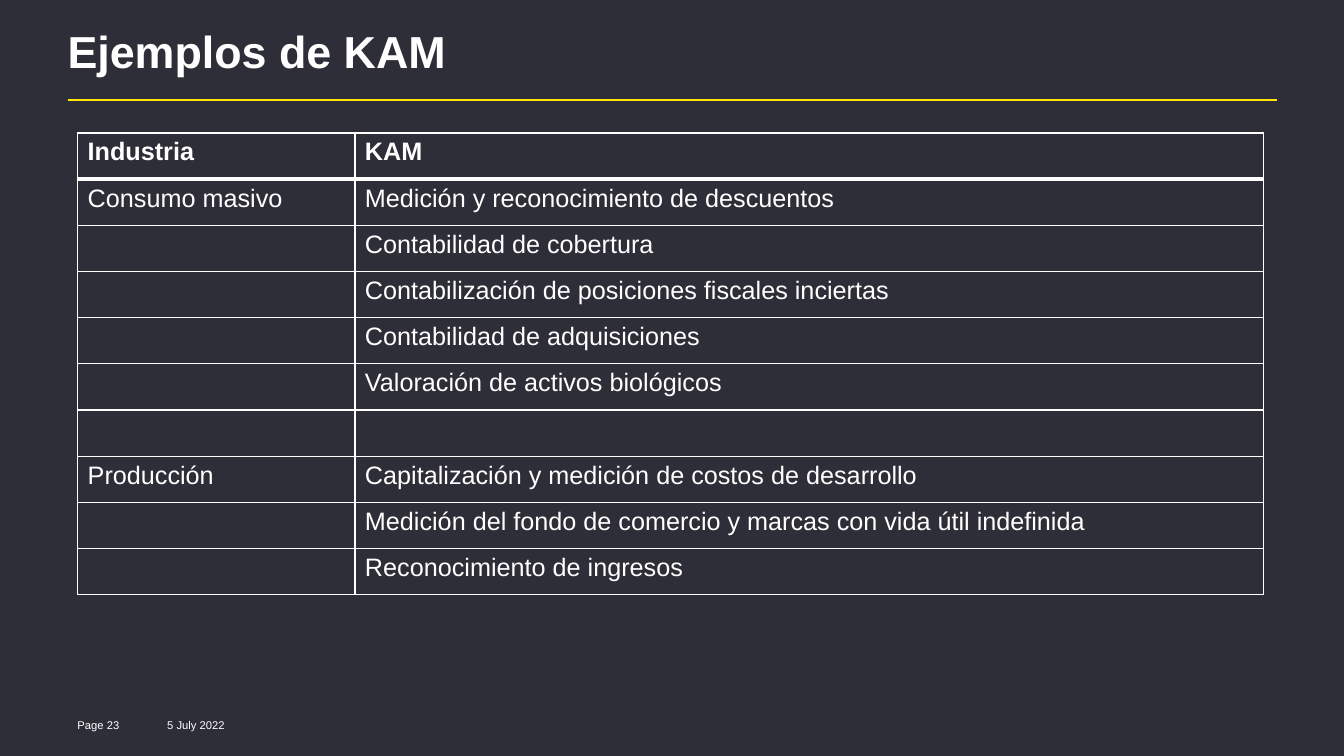
import pptx
import pptx.dml.color
import pptx.enum.shapes
import pptx.oxml
import pptx.oxml.ns
import pptx.util
from pptx.util import Inches

BACKGROUND, WHITE, YELLOW = "2E2E38", "FFFFFF", "FFE600"
KAM_ROWS = [
    ("Industria", "KAM"),
    ("Consumo masivo", "Medición y reconocimiento de descuentos"),
    ("", "Contabilidad de cobertura"),
    ("", "Contabilización de posiciones fiscales inciertas"),
    ("", "Contabilidad de adquisiciones"),
    ("", "Valoración de activos biológicos"),
    ("", ""),
    ("Producción", "Capitalización y medición de costos de desarrollo"),
    ("", "Medición del fondo de comercio y marcas con vida útil indefinida"),
    ("", "Reconocimiento de ingresos"),
]


def color(hex_code):
    return pptx.dml.color.RGBColor.from_string(hex_code)


def write(text_frame, text, size, bold=False):
    text_frame.word_wrap = True
    text_frame.text = text
    para = text_frame.paragraphs[0]
    for font in [para.font] + [span.font for span in para.runs]:
        font.name = "Arial"
        font.size = pptx.util.Pt(size)
        font.bold = bold
        font.color.rgb = color(WHITE)
    return para


def add_text(page, left, top, width, height, text, size, bold=False):
    box = page.shapes.add_textbox(Inches(left), Inches(top), Inches(width), Inches(height))
    return box.text_frame, write(box.text_frame, text, size, bold)


def add_header(page, left, top, width):
    """Title with a rule under it."""
    frame, para = add_text(page, left, top, 10.85, 0.65, "Ejemplos de KAM", 32, True)
    frame.margin_left = frame.margin_top = frame.margin_right = frame.margin_bottom = 0
    para.line_spacing = 0.85
    rule_top = Inches(top + 0.67)
    rule = page.shapes.add_connector(
        pptx.enum.shapes.MSO_CONNECTOR.STRAIGHT,
        Inches(left), rule_top, Inches(left + width), rule_top)
    rule.line.color.rgb = color(YELLOW)
    rule.line.width = pptx.util.Pt(1.5)
    properties = rule._element.spPr
    properties.append(pptx.oxml.parse_xml(f"<a:effectLst {pptx.oxml.ns.nsdecls('a')}/>"))


def set_borders(cell, widths):
    """Draw white borders; widths maps a side (L, R, T, B) to points."""
    properties = cell._tc.get_or_add_tcPr()
    for index, (side, width) in enumerate(widths.items()):
        properties.insert(index, pptx.oxml.parse_xml(
            f'<a:ln{side} {pptx.oxml.ns.nsdecls("a")} w="{pptx.util.Pt(width)}">'
            f'<a:solidFill><a:srgbClr val="{WHITE}"/></a:solidFill></a:ln{side}>'))


def add_kam_table(page, left, top, column_widths, row_height):
    table = page.shapes.add_table(
        len(KAM_ROWS), len(column_widths), Inches(left), Inches(top),
        Inches(sum(column_widths)), Inches(row_height * len(KAM_ROWS))).table
    table.horz_banding = False
    for column, width in zip(table.columns, column_widths):
        column.width = Inches(width)
    for index, texts in enumerate(KAM_ROWS):
        table.rows[index].height = Inches(row_height)
        for cell, text in zip(table.rows[index].cells, texts):
            cell.fill.background()
            write(cell.text_frame, text, 18, bold=index == 0)
            set_borders(cell, {"L": 1, "R": 1,
                               "T": 3 if index == 1 else 1,
                               "B": 3 if index == 0 else 1})


def add_footer(page, left, top):
    add_text(page, left, top, 0.72, 0.2, "Page 23", 8)
    add_text(page, left + 0.89, top, 1.3, 0.2, "5 July 2022", 8)


def main():
    deck = pptx.Presentation()
    deck.slide_width, deck.slide_height = Inches(13.33), Inches(7.5)
    page = deck.slides.add_slide(deck.slide_layouts[6])
    page.background.fill.solid()
    page.background.fill.fore_color.rgb = color(BACKGROUND)
    add_header(page, 0.67, 0.32, 12)
    add_kam_table(page, 0.77, 1.32, [2.75, 9.01], 0.458)
    add_footer(page, 0.67, 7.08)
    deck.save("out.pptx")


if __name__ == "__main__":
    main()
